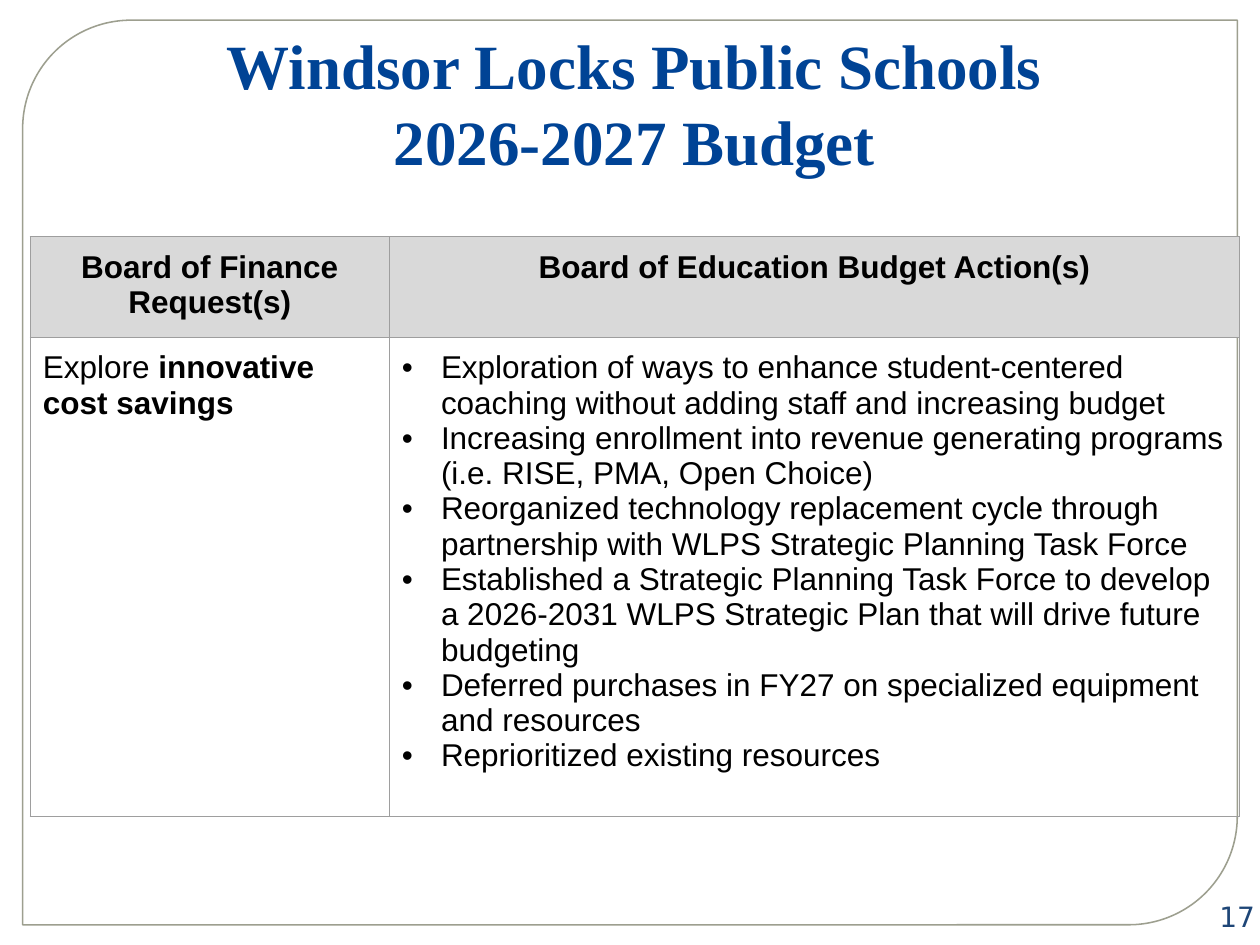
from dataclasses import dataclass

from lxml.etree import SubElement
from pptx import Presentation
from pptx.dml.color import RGBColor
from pptx.enum.shapes import MSO_SHAPE
from pptx.enum.text import MSO_ANCHOR, PP_ALIGN
from pptx.oxml.ns import qn
from pptx.util import Inches, Pt


@dataclass(frozen=True)
class Theme:
    title_color: str = "004395"
    number_color: str = "1E4677"
    text_color: str = "000000"
    header_fill: str = "D9D9D9"
    frame_line: str = "9D9F8F"
    border: str = "9E9E9E"
    title_font: str = "Times New Roman"
    body_font: str = "Arial"
    number_font: str = "DejaVu Sans"
    title_size: int = 36
    body_size: int = 18
    number_size: int = 16


THEME = Theme()

HEADERS = ["Board of Finance Request(s)", "Board of Education Budget Action(s)"]
REQUEST = [("Explore ", False), ("innovative cost savings", True)]
ACTIONS = [
    "Exploration of ways to enhance student-centered coaching without adding staff and increasing budget",
    "Increasing enrollment into revenue generating programs (i.e. RISE, PMA, Open Choice)",
    "Reorganized technology replacement cycle through partnership with WLPS Strategic Planning Task Force",
    "Established a Strategic Planning Task Force to develop a 2026-2031 WLPS Strategic Plan "
    "that will drive future budgeting",
    "Deferred purchases in FY27 on specialized equipment and resources",
    "Reprioritized existing resources",
]


def set_font(font, name, size, color, bold=False):
    font.name = name
    font.size = Pt(size)
    font.bold = bold
    font.color.rgb = RGBColor.from_string(color)


def set_margins(tf, left, top, right, bottom):
    tf.margin_left, tf.margin_top = Inches(left), Inches(top)
    tf.margin_right, tf.margin_bottom = Inches(right), Inches(bottom)


def add_title(slide, text):
    sp = slide.shapes.title
    sp.left, sp.top, sp.width, sp.height = Inches(0.1), Inches(0.13), Inches(9.81), Inches(2.23)
    tf = sp.text_frame
    tf.word_wrap = True
    tf.vertical_anchor = MSO_ANCHOR.TOP
    set_margins(tf, 0.16, 0.08, 0.1, 0.05)
    p = tf.paragraphs[0]
    p.text = text
    p.alignment = PP_ALIGN.CENTER
    p.line_spacing = Pt(43.4)
    set_font(p.font, THEME.title_font, THEME.title_size, THEME.title_color, True)


def add_frame(slide):
    """Outline the slide with two opposite corners rounded."""
    sp = slide.shapes.add_shape(MSO_SHAPE.ROUND_2_DIAG_RECTANGLE,
                                Inches(0.18), Inches(0.16), Inches(9.64), Inches(7.18))
    sp.adjustments[0] = 0.12
    sp.shadow.inherit = False
    sp.fill.background()
    sp.line.color.rgb = RGBColor.from_string(THEME.frame_line)
    sp.line.width = Pt(0.87)


def add_slide_number(slide, number):
    sp = slide.shapes.add_textbox(Inches(9.45), Inches(7.12), Inches(0.51), Inches(0.3))
    tf = sp.text_frame
    tf.word_wrap = True
    tf.vertical_anchor = MSO_ANCHOR.MIDDLE
    set_margins(tf, 0, 0, 0, 0)
    p = tf.paragraphs[0]
    p.text = number
    p.alignment = PP_ALIGN.RIGHT
    set_font(p.font, THEME.number_font, THEME.number_size, THEME.number_color)


def format_cell(cell, fill=None):
    set_margins(cell, 0.1, 0.1, 0.1, 0.1)
    tc_pr = cell._tc.get_or_add_tcPr()
    for side in ("a:lnL", "a:lnR", "a:lnT", "a:lnB"):
        ln = SubElement(tc_pr, qn(side), w=str(Pt(0.75)))
        SubElement(SubElement(ln, qn("a:solidFill")), qn("a:srgbClr"), val=THEME.border)
    if fill:
        cell.fill.solid()
        cell.fill.fore_color.rgb = RGBColor.from_string(fill)
    else:
        cell.fill.background()


def add_bullet(p):
    p_pr = p._p.get_or_add_pPr()
    p_pr.set("marL", str(Inches(0.31)))
    p_pr.set("indent", str(-Inches(0.31)))
    SubElement(p_pr, qn("a:buFont"), typeface=THEME.body_font)
    SubElement(p_pr, qn("a:buChar"), char="•")


def fill_header(cell, text):
    p = cell.text_frame.paragraphs[0]
    p.text = text
    p.alignment = PP_ALIGN.CENTER
    set_font(p.font, THEME.body_font, THEME.body_size, THEME.text_color, True)


def fill_runs(cell, runs):
    p = cell.text_frame.paragraphs[0]
    for text, bold in runs:
        r = p.add_run()
        r.text = text
        set_font(r.font, THEME.body_font, THEME.body_size, THEME.text_color, bold)


def fill_bullets(cell, items):
    tf = cell.text_frame
    for i, text in enumerate(items):
        p = tf.add_paragraph() if i else tf.paragraphs[0]
        p.text = text
        add_bullet(p)
        set_font(p.font, THEME.body_font, THEME.body_size, THEME.text_color)


def add_budget_table(slide):
    table = slide.shapes.add_table(2, 2, Inches(0.24), Inches(1.88),
                                   Inches(9.6), Inches(4.3)).table
    table.horz_banding = False
    table.first_row = False
    for column, width in zip(table.columns, (2.85, 6.75)):
        column.width = Inches(width)
    for row, height, fill in zip(table.rows, (0.75, 3.55), (THEME.header_fill, None)):
        row.height = Inches(height)
        for cell in row.cells:
            format_cell(cell, fill)
    for cell, text in zip(table.rows[0].cells, HEADERS):
        fill_header(cell, text)
    fill_runs(table.cell(1, 0), REQUEST)
    fill_bullets(table.cell(1, 1), ACTIONS)


def main():
    prs = Presentation()
    prs.slide_width, prs.slide_height = Inches(10), Inches(7.5)
    slide = prs.slides.add_slide(prs.slide_layouts[5])
    add_frame(slide)
    add_slide_number(slide, "17")
    add_title(slide, "Windsor Locks Public Schools\v2026-2027 Budget")
    add_budget_table(slide)
    prs.save("out.pptx")


if __name__ == "__main__":
    main()
